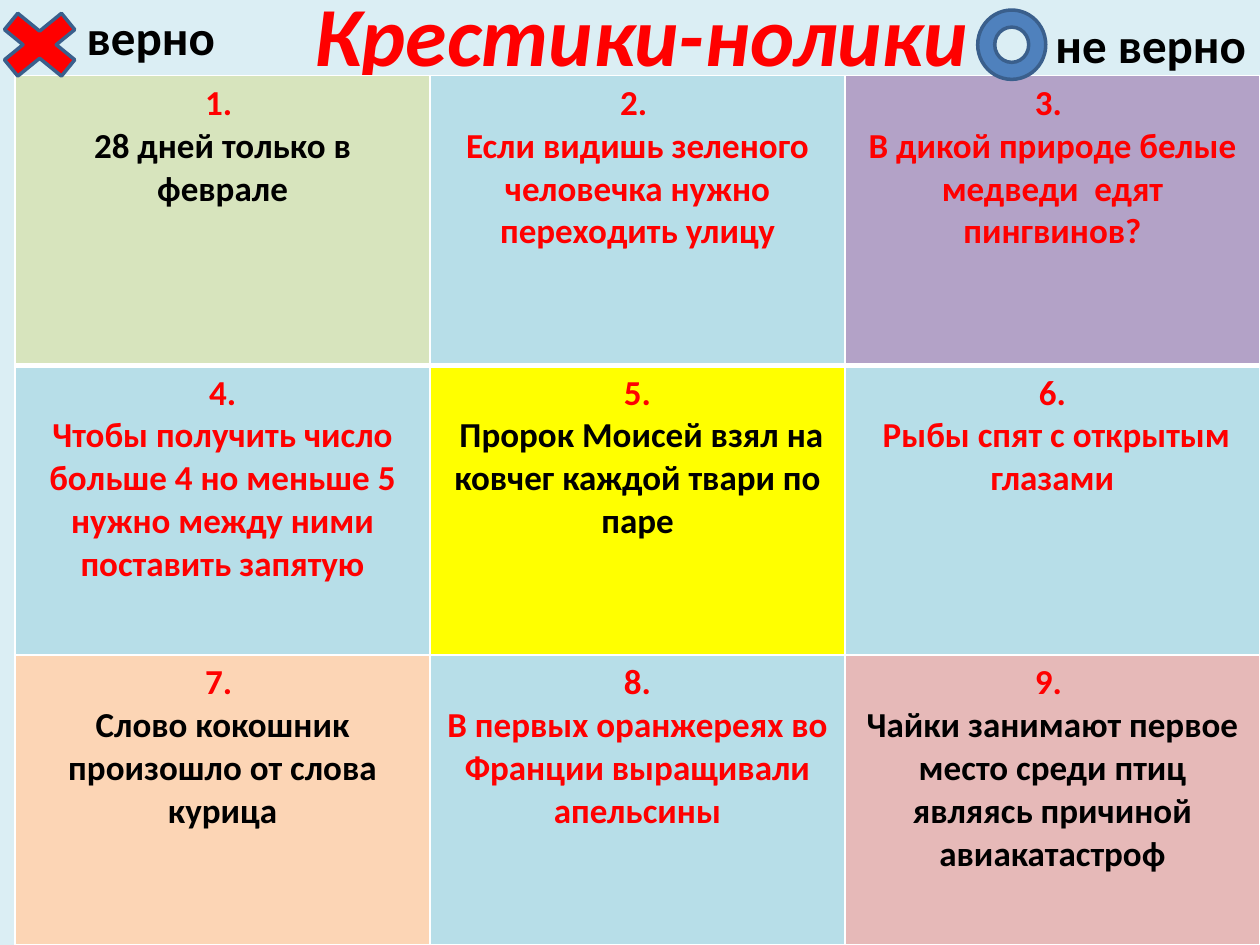
from dataclasses import dataclass

from lxml import etree
from pptx import Presentation
from pptx.dml.color import RGBColor
from pptx.enum.shapes import MSO_SHAPE
from pptx.enum.text import MSO_ANCHOR, MSO_AUTO_SIZE, PP_ALIGN
from pptx.oxml.ns import qn
from pptx.util import Inches, Pt

CROSS, NOUGHT = MSO_SHAPE.MATH_MULTIPLY, MSO_SHAPE.DONUT
CENTER, LEFT = PP_ALIGN.CENTER, PP_ALIGN.LEFT
MIDDLE, GROW, FIXED = MSO_ANCHOR.MIDDLE, MSO_AUTO_SIZE.SHAPE_TO_FIT_TEXT, MSO_AUTO_SIZE.NONE
TITLE_ONLY = 5
GRID_SIZE = 3


@dataclass(frozen=True)
class Theme:
    font: str = "Calibri"
    background: str = "DBEEF4"
    red: str = "FF0000"
    black: str = "000000"
    white: str = "FFFFFF"
    blue: str = "4F81BD"
    outline: str = "3A5F8C"
    green: str = "D7E4BD"
    aqua: str = "B7DEE8"
    purple: str = "B3A2C7"
    yellow: str = "FFFF00"
    peach: str = "FCD5B5"
    rose: str = "E6B9B8"
    title_size: int = 48
    label_size: int = 28
    cell_size: int = 20
    thin: int = 1
    thick: int = 3
    mark_line: int = 2


THEME = Theme()


@dataclass(frozen=True)
class Box:
    left: float
    top: float
    width: float
    height: float

    def emu(self) -> tuple:
        return tuple(Inches(v) for v in (self.left, self.top, self.width, self.height))


@dataclass(frozen=True)
class Statement:
    number: str
    text: str
    fill: str
    color: str = THEME.red


@dataclass(frozen=True)
class Mark:
    preset: int
    box: Box
    fill: str


@dataclass(frozen=True)
class Label:
    text: str
    box: Box


TITLE_BOX = Box(0.59, -0.04, 9, 0.61)
BOARD_BOX = Box(0.12, 0.6, 9.88, 6.9)

STATEMENTS = [
    Statement("1. ", "28 дней только в феврале", THEME.green, THEME.black),
    Statement("2. ", "Если видишь зеленого человечка нужно переходить улицу", THEME.aqua),
    Statement("3. ", "В дикой природе белые медведи  едят пингвинов?", THEME.purple),
    Statement("4.", "Чтобы получить число больше 4 но меньше 5 нужно между ними поставить запятую", THEME.aqua),
    Statement("5.", " Пророк Моисей взял на ковчег каждой твари по паре", THEME.yellow, THEME.black),
    Statement("6.", " Рыбы спят с открытым глазами", THEME.aqua),
    Statement("7. ", "Слово кокошник произошло от слова курица", THEME.peach, THEME.black),
    Statement("8.", "В первых оранжереях во Франции выращивали апельсины", THEME.aqua),
    Statement("9. ", "Чайки занимают первое место среди птиц являясь причиной авиакатастроф", THEME.rose, THEME.black),
]
MARKS = [
    Mark(CROSS, Box(-0.12, 0, 0.87, 0.71), THEME.red),
    Mark(NOUGHT, Box(7.76, 0.08, 0.54, 0.55), THEME.blue),
]
LABELS = [
    Label("верно", Box(0.59, 0, 1.73, 0.57)),
    Label(" не верно", Box(8.19, 0.07, 1.81, 0.57)),
]


def write(paragraph, text: str, size: int, color: str, align=CENTER, italic: bool = False) -> None:
    paragraph.text = text
    paragraph.alignment = align
    font = paragraph.font
    font.name, font.size, font.bold, font.italic = THEME.font, Pt(size), True, italic
    font.color.rgb = RGBColor.from_string(color)


def add_title(slide) -> None:
    title = slide.shapes.title
    title.left, title.top, title.width, title.height = TITLE_BOX.emu()
    frame = title.text_frame
    frame.vertical_anchor, frame.auto_size = MIDDLE, FIXED
    write(frame.paragraphs[0], "Крестики-нолики", THEME.title_size, THEME.red, italic=True)


def add_border(cell, side: str, width: int) -> None:
    properties = cell._tc.get_or_add_tcPr()
    line = etree.SubElement(properties, qn(f"a:ln{side}"), w=str(Pt(width)))
    fill = etree.SubElement(line, qn("a:solidFill"))
    etree.SubElement(fill, qn("a:srgbClr"), val=THEME.white)


def fill_cell(cell, statement: Statement, widths: dict) -> None:
    for side, width in widths.items():
        add_border(cell, side, width)
    cell.fill.solid()
    cell.fill.fore_color.rgb = RGBColor.from_string(statement.fill)
    frame = cell.text_frame
    write(frame.paragraphs[0], statement.number, THEME.cell_size, THEME.red)
    write(frame.add_paragraph(), statement.text, THEME.cell_size, statement.color)


def add_board(slide) -> None:
    board = slide.shapes.add_table(GRID_SIZE, GRID_SIZE, *BOARD_BOX.emu()).table
    for index, statement in enumerate(STATEMENTS):
        row, column = divmod(index, GRID_SIZE)
        widths = dict.fromkeys("LRTB", THEME.thin)
        if row == 0:
            widths["B"] = THEME.thick
        elif row == 1:
            widths["T"] = THEME.thick
        fill_cell(board.cell(row, column), statement, widths)


def add_mark(slide, mark: Mark) -> None:
    shape = slide.shapes.add_shape(mark.preset, *mark.box.emu())
    shape.shadow.inherit = False
    shape.fill.solid()
    shape.fill.fore_color.rgb = RGBColor.from_string(mark.fill)
    shape.line.color.rgb = RGBColor.from_string(THEME.outline)
    shape.line.width = Pt(THEME.mark_line)


def add_label(slide, label: Label) -> None:
    frame = slide.shapes.add_textbox(*label.box.emu()).text_frame
    frame.word_wrap, frame.auto_size = True, GROW
    write(frame.paragraphs[0], label.text, THEME.label_size, THEME.black, LEFT)


def main() -> None:
    presentation = Presentation()
    presentation.slide_width, presentation.slide_height = Inches(10), Inches(7.5)
    slide = presentation.slides.add_slide(presentation.slide_layouts[TITLE_ONLY])
    slide.background.fill.solid()
    slide.background.fill.fore_color.rgb = RGBColor.from_string(THEME.background)
    add_title(slide)
    add_board(slide)
    for mark in MARKS:
        add_mark(slide, mark)
    for label in LABELS:
        add_label(slide, label)
    presentation.save("out.pptx")


if __name__ == "__main__":
    main()
